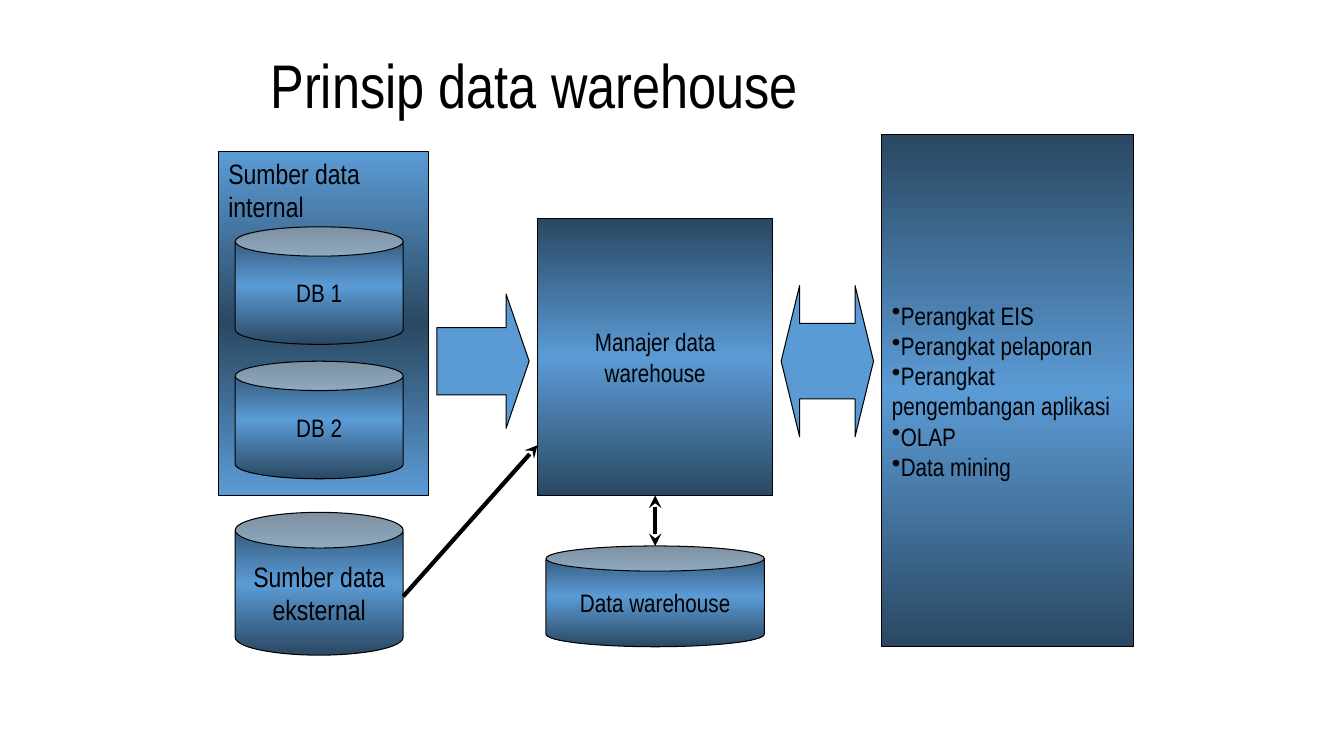
from copy import deepcopy

from lxml import etree
from pptx import Presentation
from pptx import util as u
from pptx.dml.color import RGBColor
from pptx.enum import shapes, text
from pptx.oxml.ns import qn

BLACK = RGBColor(0x00, 0x00, 0x00)
BLUE = RGBColor(0x5B, 0x9B, 0xD5)
NAVY = RGBColor(0x2A, 0x48, 0x62)
FONT = "Arial Narrow"
KIND = shapes.MSO_SHAPE
LEFT, CENTER = text.PP_ALIGN.LEFT, text.PP_ALIGN.CENTER
TOP, MIDDLE = text.MSO_ANCHOR.TOP, text.MSO_ANCHOR.MIDDLE


def add_block(kind, box, colors):
    """Add an outlined shape; three colors make a vertical gradient, one a solid fill."""
    shape = page.shapes.add_shape(kind, *map(u.Pt, box))
    shape.shadow.inherit = False
    shape.line.color.rgb = BLACK
    shape.line.width = u.Pt(0.75)
    if len(colors) == 1:
        shape.fill.solid()
        shape.fill.fore_color.rgb = colors[0]
        return shape
    shape.fill.gradient()
    shape.fill.gradient_angle = 270
    stop_list = shape._element.spPr.find(qn("a:gradFill")).find(qn("a:gsLst"))
    stop_list.insert(1, deepcopy(stop_list[0]))
    for stop, color, position in zip(shape.fill.gradient_stops, colors, (0, 0.5, 1)):
        stop.color.rgb = color
        stop.position = position
    return shape


def write(para, words, size, align):
    para.alignment = align
    span = para.add_run()
    span.text = words
    span.font.name = FONT
    span.font.size = u.Pt(size)
    span.font.color.rgb = BLACK


deck = Presentation()
deck.slide_width, deck.slide_height = u.Pt(960), u.Pt(540)
page = deck.slides.add_slide(deck.slide_layouts[5])

title = page.shapes.title
title.left, title.top, title.width, title.height = map(u.Pt, (186, 24, 600, 78))
title.text_frame.auto_size = text.MSO_AUTO_SIZE.NONE
title.text_frame.vertical_anchor = MIDDLE
title.text_frame.paragraphs[0].line_spacing = 0.9
write(title.text_frame.paragraphs[0], "Prinsip data warehouse", 44, LEFT)

# Data sources, warehouse and tools
DARK_EDGES = (NAVY, BLUE, NAVY)
DARK_MIDDLE = (BLUE, NAVY, BLUE)
TOOLS = ["Perangkat EIS", "Perangkat pelaporan", "Perangkat pengembangan aplikasi",
         "OLAP", "Data mining"]
blocks = [
    (KIND.RECTANGLE, (156, 108, 150, 246), DARK_MIDDLE, ["Sumber data internal"], 20, LEFT, TOP, True),
    (KIND.CAN, (168, 162, 120, 84), DARK_EDGES, ["DB 1"], 18, CENTER, MIDDLE, False),
    (KIND.CAN, (168, 258, 120, 84), DARK_EDGES, ["DB 2"], 18, CENTER, MIDDLE, False),
    (KIND.CAN, (168, 366, 120, 102), DARK_EDGES, ["Sumber data eksternal"], 20, CENTER, MIDDLE, True),
    (KIND.CAN, (390, 390, 156, 72), DARK_EDGES, ["Data warehouse"], 18, CENTER, MIDDLE, False),
    (KIND.RECTANGLE, (384, 156, 168, 198), DARK_EDGES, ["Manajer data warehouse"], 18, CENTER, MIDDLE, True),
    (KIND.RECTANGLE, (630, 96, 180, 366), DARK_EDGES, TOOLS, 18, LEFT, MIDDLE, True),
]
for kind, box, colors, lines, size, align, anchor, wrap in blocks:
    block = add_block(kind, box, colors)
    if kind == KIND.CAN:
        block.adjustments[0] = 0.25
    frame = block.text_frame
    frame.word_wrap = wrap
    frame.vertical_anchor = anchor
    for index, words in enumerate(lines):
        para = frame.add_paragraph() if index else frame.paragraphs[0]
        write(para, words, size, align)
        if lines is TOOLS:
            bullet = etree.SubElement(para._p.get_or_add_pPr(), qn("a:buChar"))
            bullet.set("char", "•")

# Block arrows
for kind, box, head_length in [
    (KIND.RIGHT_ARROW, (312, 210, 66, 96), 0.25),
    (KIND.LEFT_RIGHT_ARROW, (558, 204, 66, 108), 0.2),
]:
    arrow = add_block(kind, box, (BLUE,))
    arrow.adjustments[0] = 0.5
    arrow.adjustments[1] = head_length

# Line arrows
for ends, arrowheads in [
    ((288, 426, 384, 318), ["a:tailEnd"]),
    ((468, 390, 468, 354), ["a:headEnd", "a:tailEnd"]),
]:
    link = page.shapes.add_connector(shapes.MSO_CONNECTOR.STRAIGHT, *map(u.Pt, ends))
    link.line.color.rgb = BLACK
    link.line.width = u.Pt(3)
    for arrowhead in arrowheads:
        etree.SubElement(link.line._get_or_add_ln(), qn(arrowhead)).set("type", "stealth")
    etree.SubElement(link._element.spPr, qn("a:effectLst"))

deck.save("out.pptx")
